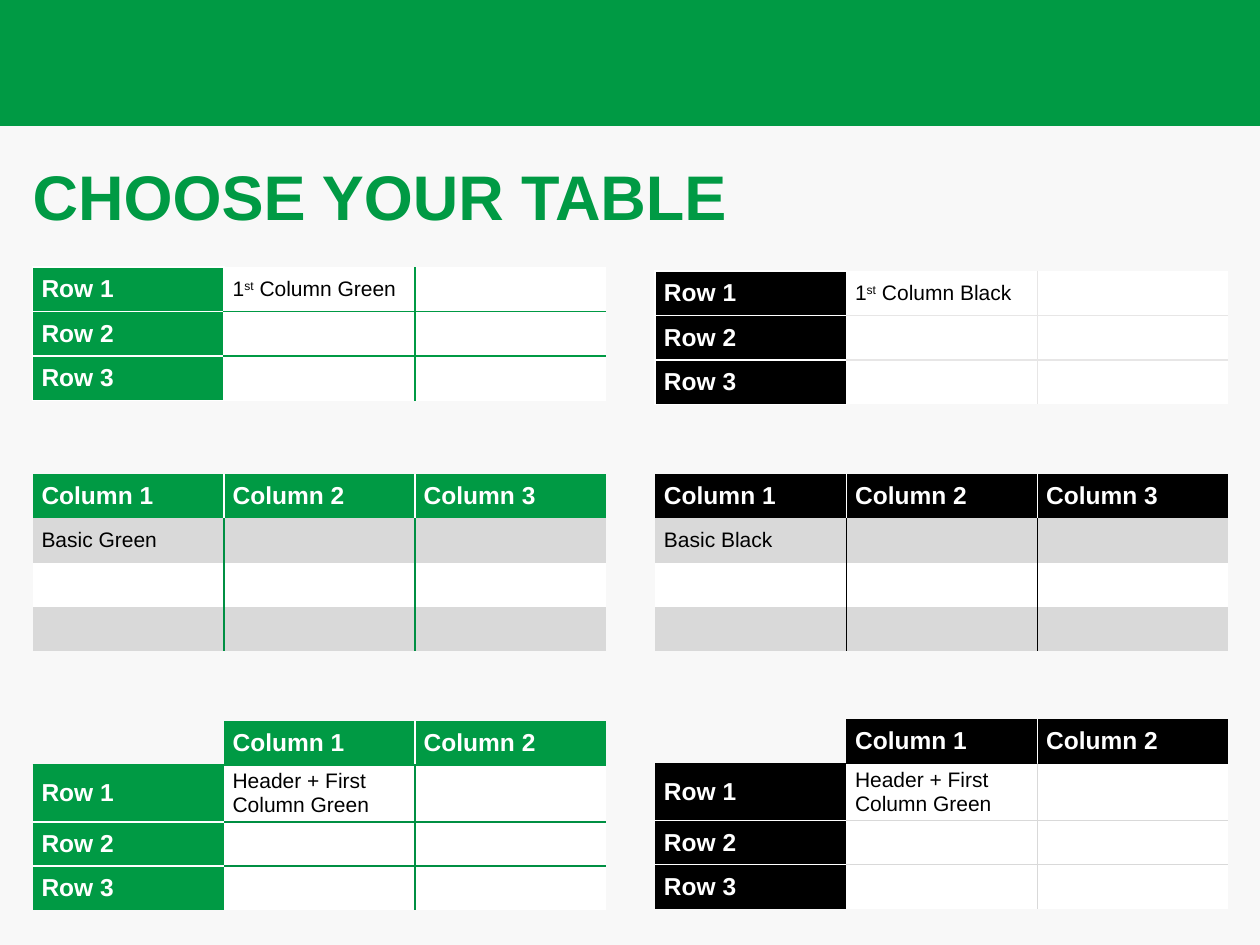
import pptx
import pptx.dml.color
import pptx.enum.shapes
import pptx.enum.text
import pptx.oxml
import pptx.oxml.ns
import pptx.util
from pptx.util import Inches

COLORS = {
    "green": "009A44", "deep green": "008F43", "black": "000000", "white": "FFFFFF",
    "page": "F8F8F8", "band": "D9D9D9", "pale": "E7E6E6",
}
NO_STYLE = "{2D5ABB26-0587-4C30-8999-92F81FD0307C}"


def rgb(name):
    return pptx.dml.color.RGBColor.from_string(COLORS[name])


def add_border(cell, side, color):
    cell._tc.get_or_add_tcPr().append(pptx.oxml.parse_xml(
        f'<a:ln{side} {pptx.oxml.ns.nsdecls("a")} w="12700"><a:solidFill>'
        f'<a:srgbClr val="{COLORS[color]}"/></a:solidFill></a:ln{side}>'))


deck = pptx.Presentation()
deck.slide_width, deck.slide_height = Inches(10), Inches(7.5)
page = deck.slides.add_slide(deck.slide_layouts[5])
page.background.fill.solid()
page.background.fill.fore_color.rgb = rgb("page")

banner = page.shapes.add_shape(
    pptx.enum.shapes.MSO_SHAPE.RECTANGLE, 0, 0, deck.slide_width, Inches(1))
banner.shadow.inherit = False
banner.fill.solid()
banner.fill.fore_color.rgb = rgb("green")
banner.line.fill.background()

title = page.shapes.title
title.left, title.top, title.width, title.height = (
    Inches(0.26), Inches(1.29), Inches(9.49), Inches(0.59))
frame = title.text_frame
frame.text = "CHOOSE YOUR TABLE"
frame.auto_size = pptx.enum.text.MSO_AUTO_SIZE.NONE
frame.vertical_anchor = pptx.enum.text.MSO_ANCHOR.MIDDLE
frame.margin_left = frame.margin_right = 0
para = frame.paragraphs[0]
para.alignment = pptx.enum.text.PP_ALIGN.LEFT
para.line_spacing = 0.9
font = para.runs[0].font
font.name, font.size, font.bold = "Arial", pptx.util.Pt(36), True
font.color.rgb = rgb("green")

rows = ["Row 1", "Row 2", "Row 3"]
columns = ["Column 1", "Column 2", "Column 3"]
LEFT, RIGHT = 0.26, 5.2
tables = [
    (LEFT, 2.12, 1.06, [], rows, ["1", "st", " Column Green"], "green", "green"),
    (RIGHT, 2.15, 1.06, [], rows, ["1", "st", " Column Black"], "black", "pale"),
    (LEFT, 3.76, 1.41, columns, [], ["Basic Green"], "green", "deep green"),
    (RIGHT, 3.76, 1.41, columns, [], ["Basic Black"], "black", "black"),
    (LEFT, 5.72, 1.53, columns[:2], rows, ["Header + First Column Green"], "green", "deep green"),
    (RIGHT, 5.71, 1.53, columns[:2], rows, ["Header + First Column Green"], "black", "band"),
]

for left, top, height, headers, labels, sample, accent, rule in tables:
    first_row, first_column = int(bool(headers)), int(bool(labels))
    row_count = 3 + first_row
    graphic = page.shapes.add_table(
        row_count, 3, Inches(left), Inches(top), Inches(4.55), Inches(height))
    table = graphic.table
    table.first_row = table.horz_banding = False
    table._tbl.tblPr.find(pptx.oxml.ns.qn("a:tableStyleId")).text = NO_STYLE
    if headers and labels:
        for row in table.rows:
            row.height = Inches(0.35)
        table.rows[1].height = Inches(0.42)

    for r in range(row_count):
        for c in range(3):
            cell = table.cell(r, c)
            is_header, is_label = r < first_row, c < first_column
            is_corner = is_header and is_label
            is_heading = is_header or is_label

            verticals = {}
            for side, edge in (("L", c), ("R", c + 1)):
                if edge in (1, 2) and edge > first_column:
                    verticals[side] = "white" if is_header else rule
                elif edge == 1 and not headers:
                    verticals[side] = "white"
            horizontals = {}
            for side, edge in (("T", r), ("B", r + 1)):
                if labels and 0 < edge < row_count:
                    if edge == first_row:
                        horizontals[side] = accent
                    else:
                        horizontals[side] = "white" if is_label else rule
            if is_label and not headers:
                verticals["L"] = "white"
                horizontals = {"T": "white", "B": "white"}
            for side, color in (verticals | horizontals).items():
                add_border(cell, side, color)

            if is_corner:
                cell.fill.background()
            else:
                cell.fill.solid()
                banded = not labels and r % 2 == 1
                cell.fill.fore_color.rgb = rgb(
                    accent if is_heading else "band" if banded else "white")

            cell.vertical_anchor = pptx.enum.text.MSO_ANCHOR.MIDDLE
            cell.margin_left = cell.margin_right = Inches(0.07)
            cell.margin_top = cell.margin_bottom = Inches(0.04)
            if is_corner:
                pieces = []
            elif is_header:
                pieces = [headers[c - first_column]]
            elif is_label:
                pieces = [labels[r - first_row]]
            else:
                pieces = sample if (r, c) == (first_row, first_column) else []
            para = cell.text_frame.paragraphs[0]
            for piece in pieces:
                span = para.add_run()
                span.text = piece
                span.font.name = "Arial"
                span.font.size = pptx.util.Pt(14 if is_heading else 12)
                span.font.bold = is_heading
                span.font.color.rgb = rgb("white" if is_heading else "black")
                if piece == "st":
                    span.font._element.set("baseline", "30000")
            if not pieces:
                para._p.get_or_add_endParaRPr().set("sz", "1200")

deck.save("out.pptx")
